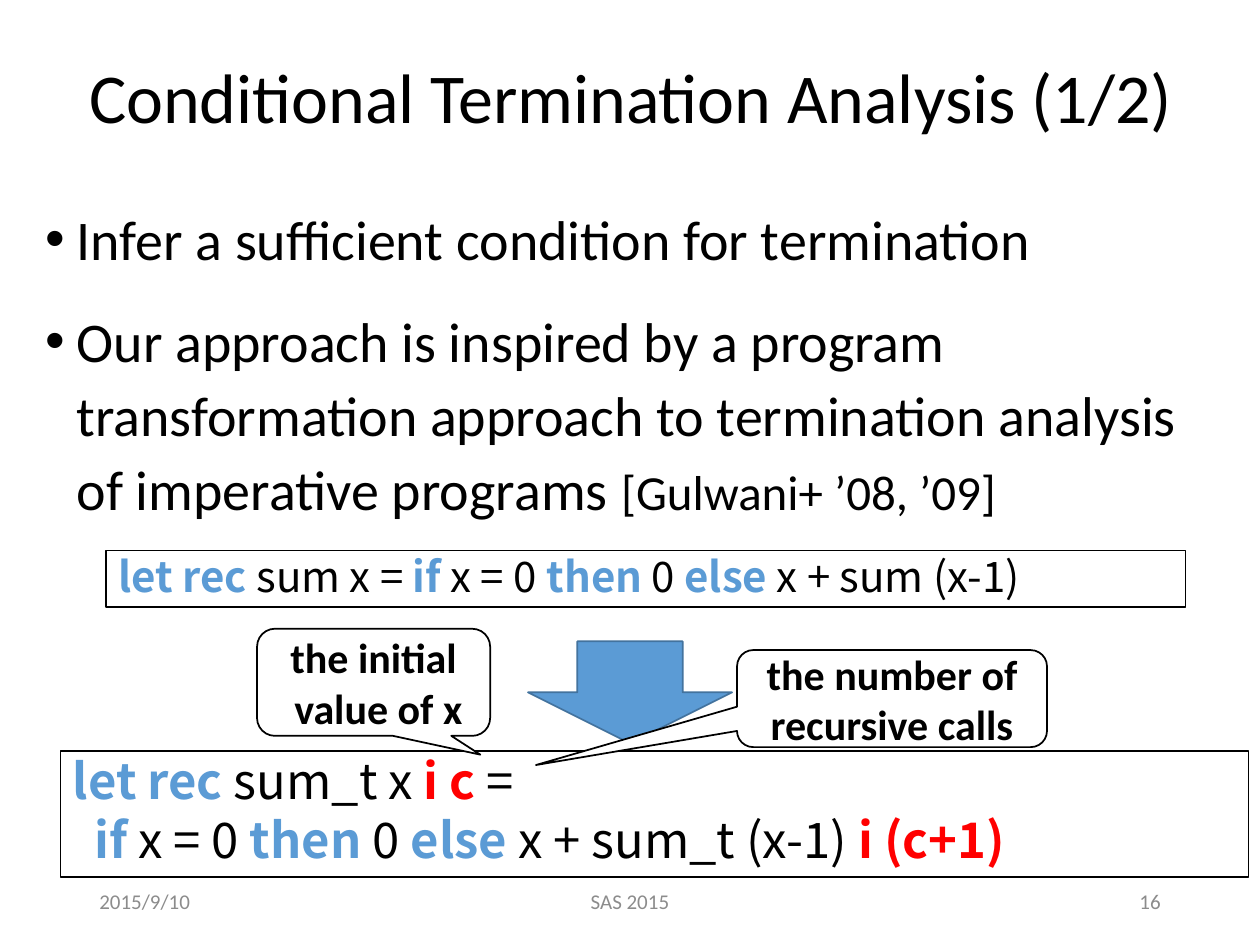
from dataclasses import dataclass

from lxml import etree
from pptx import Presentation
from pptx import util as u
from pptx.dml.color import RGBColor
from pptx.enum import shapes, text
from pptx.oxml.ns import qn

PX = 9144
BLACK, WHITE, BLUE, RED, GREY = "000000", "FFFFFF", "5B9BD5", "FF0000", "8C8C8C"
SANS, CODE = "Calibri", "Noto Sans CJK JP"
LEFT, CENTER, RIGHT = text.PP_ALIGN.LEFT, text.PP_ALIGN.CENTER, text.PP_ALIGN.RIGHT
MIDDLE, TOP = text.MSO_ANCHOR.MIDDLE, text.MSO_ANCHOR.TOP
SHAPE = shapes.MSO_SHAPE


@dataclass
class Area:
    left: int
    top: int
    width: int
    height: int

    def emu(self) -> list[int]:
        return [n * PX for n in (self.left, self.top, self.width, self.height)]


@dataclass
class Span:
    words: str
    color: str = BLACK
    bold: bool = False
    size: int | None = None


@dataclass
class Line:
    spans: list[Span]
    indent: int = 0


@dataclass
class Style:
    size: int
    font: str = SANS
    align: text.PP_ALIGN = LEFT
    anchor: text.MSO_ANCHOR = MIDDLE
    insets: tuple[int, int, int, int] = (10, 5, 10, 5)
    spacing: float = 1.0
    before: int = 0
    after: int = 0
    bullet: bool = False


def rgb(color: str) -> RGBColor:
    return RGBColor.from_string(color)


def key(words: str) -> Span:
    return Span(words, BLUE, True)


def extra(words: str) -> Span:
    return Span(words, RED, True)


def add_bullet(para) -> None:
    props = para._p.get_or_add_pPr()
    props.set("marL", str(25 * PX))
    props.set("indent", str(-25 * PX))
    etree.SubElement(props, qn("a:buFont")).set("typeface", "Arial")
    etree.SubElement(props, qn("a:buChar")).set("char", "•")


def write(box, lines: list[Line], style: Style) -> None:
    frame = box.text_frame
    frame.word_wrap = True
    frame.vertical_anchor = style.anchor
    (frame.margin_left, frame.margin_top,
     frame.margin_right, frame.margin_bottom) = [n * PX for n in style.insets]
    for index, line in enumerate(lines):
        para = frame.add_paragraph() if index else frame.paragraphs[0]
        para.alignment = style.align
        para.line_spacing = style.spacing
        para.space_before = u.Pt(style.before)
        para.space_after = u.Pt(style.after)
        para.font.name = style.font
        para.font.size = u.Pt(style.size)
        if style.bullet:
            add_bullet(para)
        elif line.indent:
            para._p.get_or_add_pPr().set("marL", str(line.indent * PX))
        for span in line.spans:
            for part, words in enumerate(span.words.split("\n")):
                if part:
                    para.add_line_break()
                run = para.add_run()
                run.text = words
                run.font.bold = span.bold
                run.font.color.rgb = rgb(span.color)
                if span.size:
                    run.font.size = u.Pt(span.size)


def add_text(page, area: Area, lines: list[Line], style: Style) -> None:
    write(page.shapes.add_textbox(*area.emu()), lines, style)


def add_box(page, kind: SHAPE, area: Area, fill: str = WHITE, edge: str = BLACK,
            adjust: tuple[float, ...] = ()):
    box = page.shapes.add_shape(kind, *area.emu())
    box.shadow.inherit = False
    box.fill.solid()
    box.fill.fore_color.rgb = rgb(fill)
    box.line.color.rgb = rgb(edge)
    box.line.width = u.Pt(1)
    for index, value in enumerate(adjust):
        box.adjustments[index] = value
    return box


def add_code(page, area: Area, lines: list[Line], size: int) -> None:
    style = Style(size, CODE, anchor=TOP, insets=(10, 0, 0, 5))
    write(add_box(page, SHAPE.RECTANGLE, area), lines, style)


def add_callout(page, area: Area, tip: tuple[float, float], lines: list[str]) -> None:
    box = add_box(page, SHAPE.ROUNDED_RECTANGULAR_CALLOUT, area, adjust=(*tip, 0.167))
    write(box, [Line([Span(words, bold=True)]) for words in lines],
          Style(24, align=CENTER))


def main() -> None:
    deck = Presentation()
    deck.slide_width, deck.slide_height = 1000 * PX, 750 * PX
    page = deck.slides.add_slide(deck.slide_layouts[6])

    add_code(page, Area(48, 596, 943, 100), [
        Line([key("let rec "), Span("sum_t x "), extra("i c"), Span(" =")]),
        Line([key("if"), Span(" x = 0 "), key("then"), Span(" 0 "), key("else "),
              Span("x + sum_t (x-1) "), extra("i (c+1)")], indent=17),
    ], 28)
    add_text(page, Area(26, 20, 949, 120),
             [Line([Span("Conditional Termination Analysis (1/2)")])],
             Style(40, align=CENTER, spacing=0.9))
    add_text(page, Area(26, 152, 974, 476), [
        Line([Span("Infer a sufficient condition for termination")]),
        Line([Span("Our approach is inspired by a program transformation approach "
                   "to termination analysis\nof imperative programs "),
              Span("[Gulwani+ ’08, ’09]", size=28)]),
    ], Style(32, anchor=TOP, spacing=1.1, before=10, after=6, bullet=True))

    for left, width, words, align in [(69, 225, "2015/9/10", LEFT),
                                      (331, 338, "SAS 2015", CENTER),
                                      (706, 225, "16", RIGHT)]:
        add_text(page, Area(left, 695, width, 40), [Line([Span(words, GREY)])],
                 Style(12, align=align))

    add_code(page, Area(84, 437, 857, 45), [
        Line([key("let rec "), Span("sum x = "), key("if"), Span(" x = 0 "),
              key("then"), Span(" 0 "), key("else "), Span("x + sum (x-1)")]),
    ], 24)
    add_box(page, SHAPE.DOWN_ARROW, Area(419, 509, 162, 81), BLUE, "43739E",
            (0.516, 0.5))
    add_callout(page, Area(585, 516, 246, 77), (-1.149, 0.685),
                ["the number of recursive calls"])
    add_callout(page, Area(204, 499, 185, 85), (0.458, 0.676),
                ["the initial", " value of x"])
    deck.save("out.pptx")


if __name__ == "__main__":
    main()
